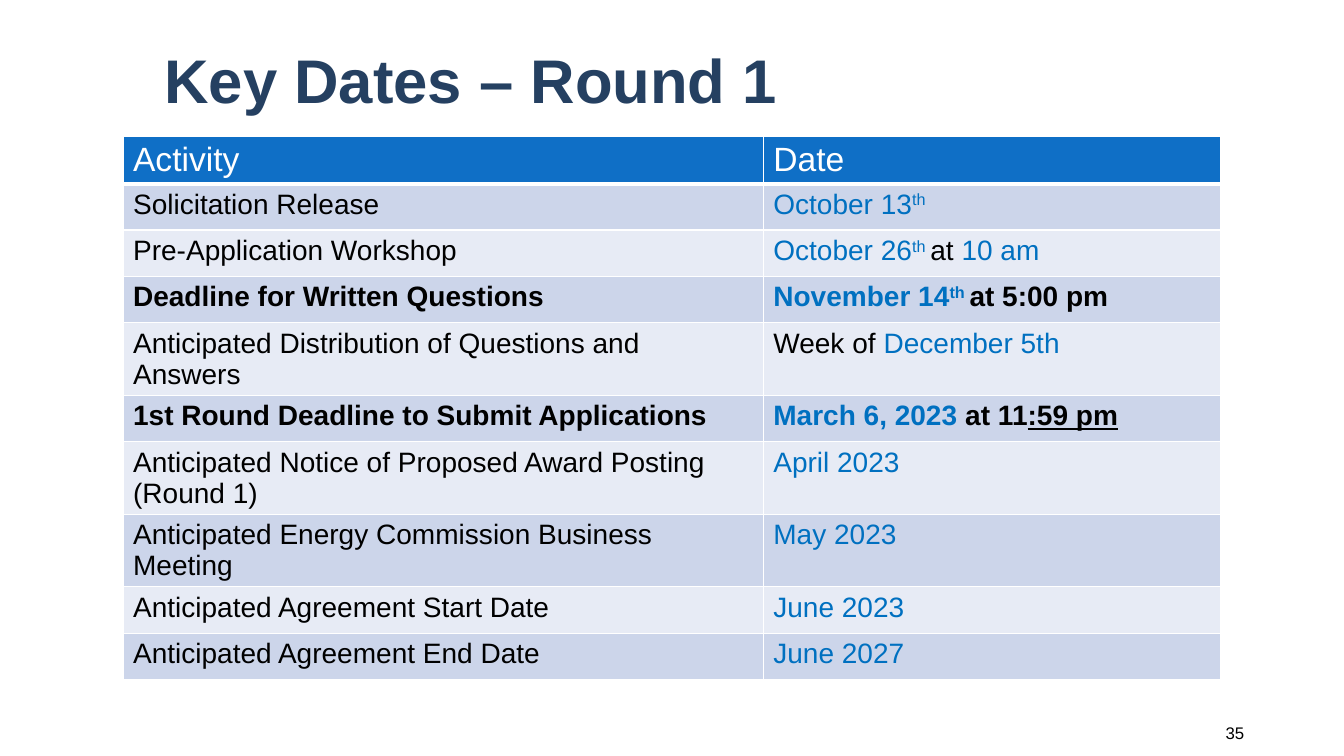
import pptx
import pptx.dml.color
import pptx.enum.text
import pptx.util
from pptx.oxml import parse_xml
from pptx.oxml.ns import nsdecls

COLORS = {
    "navy": "254061",
    "header": "0F6FC6",
    "band_dark": "CCD5EA",
    "band_light": "E7EBF5",
    "date": "0070C0",
    "black": "000000",
    "white": "FFFFFF",
}

DATE = {"color": "date"}
RAISED = {"color": "date", "raised": True}

KEY_DATES = [
    ("Solicitation Release", [("October 13", DATE), ("th", RAISED)], False),
    ("Pre-Application Workshop",
     [("October 26", DATE), ("th ", RAISED), ("at ", {}), ("10 am", DATE)], False),
    ("Deadline for Written Questions",
     [("November 14", DATE), ("th ", RAISED), ("at 5:00 pm", {})], True),
    ("Anticipated Distribution of Questions and Answers",
     [("Week of ", {}), ("December 5th", DATE)], False),
    ("1st Round Deadline to Submit Applications",
     [("March 6, 2023 ", DATE), ("at 11", {}), (":59 pm", {"underline": True})], True),
    ("Anticipated Notice of Proposed Award Posting (Round 1)", [("April 2023", DATE)], False),
    ("Anticipated Energy Commission Business Meeting", [("May 2023", DATE)], False),
    ("Anticipated Agreement Start Date", [("June 2023", DATE)], False),
    ("Anticipated Agreement End Date", [("June 2027", DATE)], False),
]


class SlideBuilder:
    font_name = "Arial"
    emu_per_px = 9144

    def __init__(self, slide):
        self.slide = slide

    def px(self, length):
        return pptx.util.Emu(length * self.emu_per_px)

    def rgb(self, color):
        return pptx.dml.color.RGBColor.from_string(COLORS[color])

    def add_run(self, paragraph, text, size, color="black", bold=False,
                underline=False, raised=False):
        run = paragraph.add_run()
        run.text = text
        run.font.name = self.font_name
        run.font.size = pptx.util.Pt(size)
        run.font.bold = bold
        run.font.color.rgb = self.rgb(color)
        if underline:
            run.font.underline = True
        if raised:
            run._r.get_or_add_rPr().set("baseline", "30000")

    def title(self, text, left, top, width, height):
        heading = self.slide.shapes.title
        heading.left, heading.top = self.px(left), self.px(top)
        heading.width, heading.height = self.px(width), self.px(height)
        frame = heading.text_frame
        frame.auto_size = pptx.enum.text.MSO_AUTO_SIZE.NONE
        frame.vertical_anchor = pptx.enum.text.MSO_ANCHOR.MIDDLE
        paragraph = frame.paragraphs[0]
        paragraph.alignment = pptx.enum.text.PP_ALIGN.LEFT
        paragraph.line_spacing = 0.9
        self.add_run(paragraph, text, 44, "navy", bold=True)

    def page_number(self, text, left, top, width, height):
        box = self.slide.shapes.add_textbox(*map(self.px, (left, top, width, height)))
        frame = box.text_frame
        frame.word_wrap = True
        frame.vertical_anchor = pptx.enum.text.MSO_ANCHOR.MIDDLE
        paragraph = frame.paragraphs[0]
        paragraph.alignment = pptx.enum.text.PP_ALIGN.RIGHT
        self.add_run(paragraph, text, 12)

    def cell(self, cell, runs, size, fill, bottom=1, bold=False):
        properties = cell._tc.get_or_add_tcPr()
        for side, points in (("L", 1), ("R", 1), ("T", 1), ("B", bottom)):
            properties.append(parse_xml(
                f'<a:ln{side} {nsdecls("a")} w="{points * 12700}"><a:solidFill>'
                f'<a:srgbClr val="{COLORS["white"]}"/></a:solidFill></a:ln{side}>'))
        cell.fill.solid()
        cell.fill.fore_color.rgb = self.rgb(fill)
        for text, style in runs:
            self.add_run(cell.text_frame.paragraphs[0], text, size, bold=bold, **style)

    def schedule(self, headings, entries, left, top, column_widths, row_height):
        row_count = len(entries) + 1
        table = self.slide.shapes.add_table(
            row_count, len(column_widths), self.px(left), self.px(top),
            self.px(sum(column_widths)), self.px(row_height * row_count)).table
        for column, width in zip(table.columns, column_widths):
            column.width = self.px(width)
        for index, heading in enumerate(headings):
            self.cell(table.cell(0, index), [(heading, {"color": "white"})], 24,
                      "header", bottom=3)
        for row, (activity, date, bold) in enumerate(entries, 1):
            band = "band_dark" if row % 2 else "band_light"
            for index, runs in enumerate(([(activity, {})], date)):
                self.cell(table.cell(row, index), runs, 20, band, bold=bold)


def main():
    deck = pptx.Presentation()
    deck.slide_width = pptx.util.Inches(13.33)
    deck.slide_height = pptx.util.Inches(7.5)
    builder = SlideBuilder(deck.slides.add_slide(deck.slide_layouts[5]))
    builder.title("Key Dates – Round 1", 153, 26, 1089, 114)
    builder.schedule(("Activity", "Date"), KEY_DATES, 122, 135, (635, 454), 46)
    builder.page_number("35", 1047, 707, 197, 40)
    deck.save("out.pptx")


if __name__ == "__main__":
    main()
